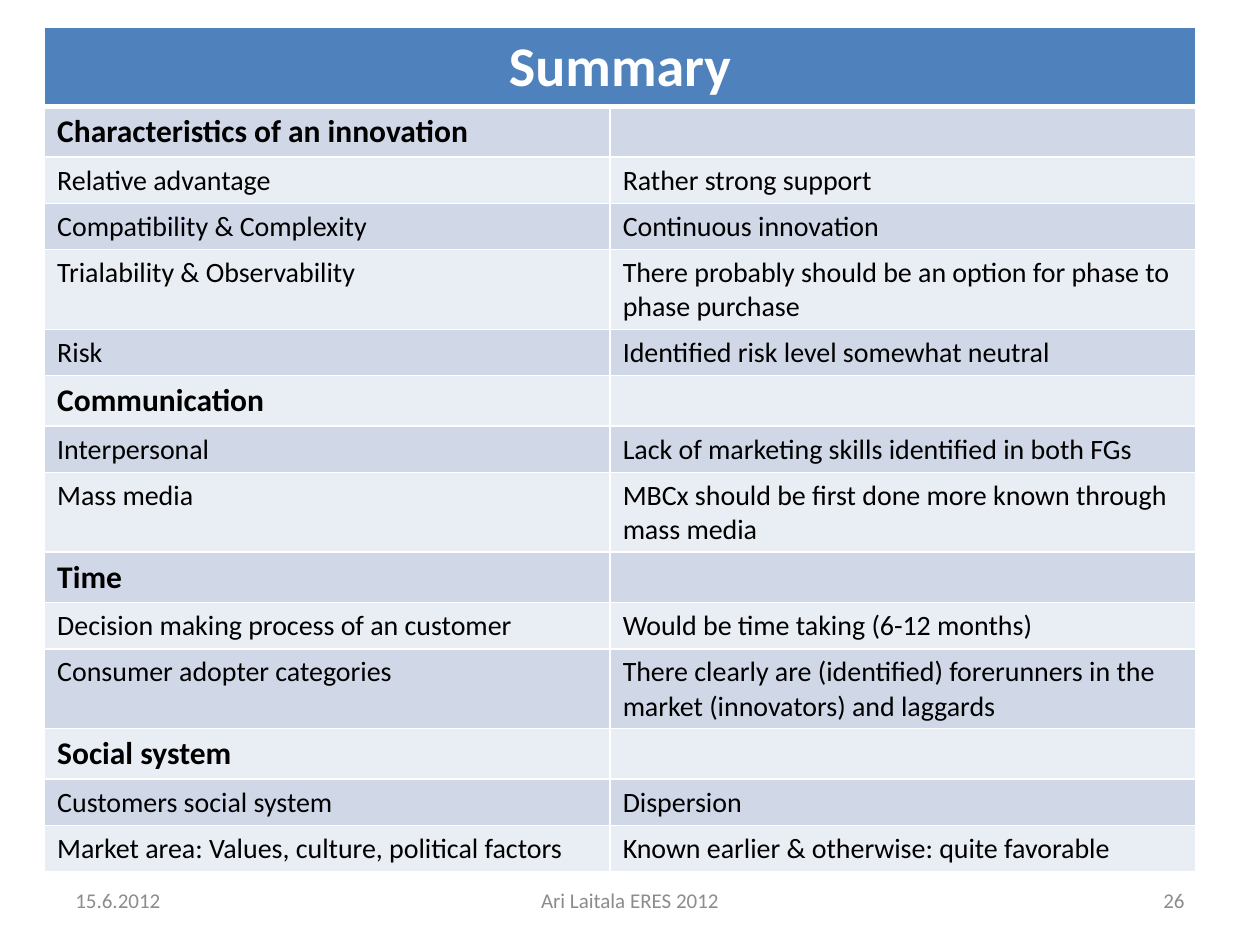
import pptx
import pptx.dml.color
import pptx.enum.text
import pptx.oxml.ns
import pptx.util
from lxml import etree
from pptx.util import Cm, Pt

ALIGN = pptx.enum.text.PP_ALIGN

# Content: each section has a heading and its (topic, finding) rows
TITLE = "Summary"
SECTIONS = [
    ("Characteristics of an innovation", [
        ("Relative advantage", "Rather strong support"),
        ("Compatibility & Complexity", "Continuous innovation"),
        ("Trialability & Observability",
         "There probably should be an option for phase to phase purchase"),
        ("Risk", "Identified risk level somewhat neutral"),
    ]),
    ("Communication", [
        ("Interpersonal", "Lack of marketing skills identified in both FGs"),
        ("Mass media", "MBCx should be first done more known through mass media"),
    ]),
    ("Time", [
        ("Decision making process of an customer", "Would be time taking (6-12 months)"),
        ("Consumer adopter categories",
         "There clearly are (identified) forerunners in the market (innovators) and laggards"),
    ]),
    ("Social system", [
        ("Customers social system", "Dispersion"),
        ("Market area: Values, culture, political factors",
         "Known earlier & otherwise: quite favorable"),
    ]),
]
# Footer: text, left, width, alignment
FOOTER = [
    ("15.6.2012", 1.27, 5.93, ALIGN.LEFT),
    ("Ari Laitala ERES 2012", 8.68, 8.04, ALIGN.CENTER),
    ("26", 18.2, 5.93, ALIGN.RIGHT),
]

THEME = {
    "font": "Calibri",
    "title_size": 32, "heading_size": 18, "body_size": 16, "footer_size": 12,
    "title_fill": "4F81BD", "bands": ("D0D8E8", "E9EDF4"),
    "light": "FFFFFF", "dark": "000000", "muted": "8C8C8C",
}
COLUMN_WIDTHS = (11.4, 11.8)
ROW_HEIGHT = 0.89


def rgb(value):
    return pptx.dml.color.RGBColor.from_string(value)


def write(text_frame, text, size, color, bold=False, alignment=ALIGN.LEFT):
    text_frame.text = text
    paragraph = text_frame.paragraphs[0]
    paragraph.alignment = alignment
    font = paragraph.runs[0].font if text else paragraph.font
    font.name = THEME["font"]
    font.size = Pt(size)
    font.bold = bold
    font.color.rgb = rgb(color)


def paint_cell(cell, fill, bottom_width=1):
    """Give a cell white borders and a solid fill."""
    properties = cell._tc.get_or_add_tcPr()
    qn = pptx.oxml.ns.qn
    for side, width in (("L", 1), ("R", 1), ("T", 1), ("B", bottom_width)):
        line = etree.SubElement(properties, qn(f"a:ln{side}"), w=str(Pt(width)))
        solid = etree.SubElement(line, qn("a:solidFill"))
        etree.SubElement(solid, qn("a:srgbClr"), val=THEME["light"])
    cell.fill.solid()
    cell.fill.fore_color.rgb = rgb(fill)


def add_summary_table(slide):
    rows = []
    for heading, findings in SECTIONS:
        rows.append((heading, "", True))
        rows += [(topic, finding, False) for topic, finding in findings]

    row_count = len(rows) + 1
    table = slide.shapes.add_table(
        row_count, 2, Cm(0.9), Cm(0.54),
        Cm(sum(COLUMN_WIDTHS)), Cm(ROW_HEIGHT * row_count)).table
    for column, width in zip(table.columns, COLUMN_WIDTHS):
        column.width = Cm(width)

    # Title row across both columns
    for cell in table.rows[0].cells:
        paint_cell(cell, THEME["title_fill"], bottom_width=3)
    title_cell = table.cell(0, 0)
    title_cell.merge(table.cell(0, 1))
    write(title_cell.text_frame, TITLE, THEME["title_size"], THEME["light"],
          True, ALIGN.CENTER)

    # Banded rows
    for index, (topic, finding, is_heading) in enumerate(rows):
        size = THEME["heading_size" if is_heading else "body_size"]
        for cell, text in zip(table.rows[index + 1].cells, (topic, finding)):
            paint_cell(cell, THEME["bands"][index % 2])
            write(cell.text_frame, text, size, THEME["dark"], is_heading)


def add_footer(slide):
    for text, left, width, alignment in FOOTER:
        text_frame = slide.shapes.add_textbox(
            Cm(left), Cm(17.65), Cm(width), Cm(1.01)).text_frame
        text_frame.word_wrap = True
        text_frame.vertical_anchor = pptx.enum.text.MSO_ANCHOR.MIDDLE
        write(text_frame, text, THEME["footer_size"], THEME["muted"], alignment=alignment)


def main():
    presentation = pptx.Presentation()
    presentation.slide_width, presentation.slide_height = Cm(25.4), Cm(19.05)
    slide = presentation.slides.add_slide(presentation.slide_layouts[6])
    add_footer(slide)
    add_summary_table(slide)
    presentation.save("out.pptx")


if __name__ == "__main__":
    main()
